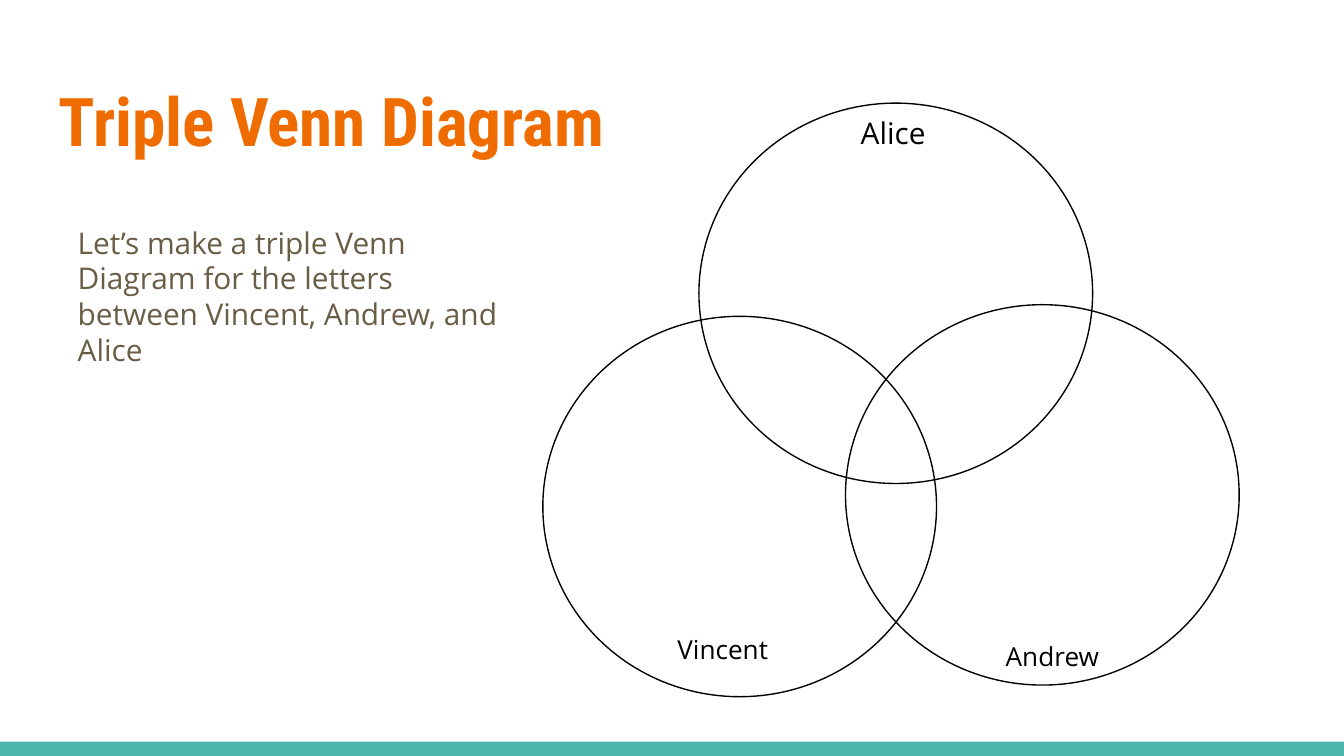
from dataclasses import dataclass

from pptx import Presentation
from pptx.dml.color import RGBColor
from pptx.enum.shapes import MSO_SHAPE
from pptx.enum.text import MSO_ANCHOR, PP_ALIGN
from pptx.util import Cm, Pt


@dataclass(frozen=True)
class Theme:
    title: RGBColor = RGBColor(0xEF, 0x6C, 0x00)
    body: RGBColor = RGBColor(0x69, 0x5D, 0x46)
    ink: RGBColor = RGBColor(0, 0, 0)
    band: RGBColor = RGBColor(0x4D, 0xB6, 0xAC)
    title_font: str = "Roboto Condensed"
    body_font: str = "Open Sans"
    title_size: int = 36
    body_size: int = 16
    label_size: int = 14


THEME = Theme()
WIDTH, HEIGHT = 25.4, 14.29
BAND_HEIGHT = 0.27
CIRCLE_SIZE = (7.44, 7.19)

# Left and top of each circle
CIRCLES = [(13.21, 1.95), (15.98, 5.76), (10.26, 5.98)]

# Name, box (left, top, width, height) and type size
LABELS = [
    ("Alice", (15.29, 1.91, 3.18, 0.91), THEME.body_size),
    ("Vincent", (12.07, 11.73, 3.18, 0.91), THEME.label_size),
    ("Andrew", (18.57, 11.86, 2.64, 0.66), THEME.label_size),
]


def set_attrs(obj, values):
    for name, value in values.items():
        setattr(obj, name, value)


def write_text(sp, text, font, size, color, align=PP_ALIGN.LEFT, bold=False):
    tf = sp.text_frame
    inset = Cm(0.25)
    set_attrs(tf, {
        "word_wrap": True, "vertical_anchor": MSO_ANCHOR.TOP,
        "margin_left": inset, "margin_right": inset,
        "margin_top": inset, "margin_bottom": inset,
    })
    p = tf.paragraphs[0]
    set_attrs(p, {"alignment": align, "line_spacing": 1.0, "space_before": Pt(0)})
    r = p.add_run()
    r.text = text
    set_attrs(r.font, {"name": font, "size": Pt(size), "bold": bold})
    r.font.color.rgb = color


def add_title(s, text):
    sp = s.shapes.title
    set_attrs(sp, {"left": Cm(0.86), "top": Cm(1.24),
                   "width": Cm(23.67), "height": Cm(1.96)})
    write_text(sp, text, THEME.title_font, THEME.title_size, THEME.title, bold=True)


def add_text(s, text, box, size, color, align=PP_ALIGN.LEFT):
    sp = s.shapes.add_textbox(*map(Cm, box))
    write_text(sp, text, THEME.body_font, size, color, align)


def add_circle(s, left, top):
    sp = s.shapes.add_shape(MSO_SHAPE.OVAL, *map(Cm, (left, top, *CIRCLE_SIZE)))
    sp.shadow.inherit = False
    sp.fill.background()
    sp.line.color.rgb = THEME.ink
    sp.line.width = Pt(0.75)


def add_band(s):
    sp = s.shapes.add_shape(MSO_SHAPE.RECTANGLE, 0, Cm(HEIGHT - BAND_HEIGHT),
                            Cm(WIDTH), Cm(BAND_HEIGHT))
    sp.shadow.inherit = False
    sp.fill.solid()
    sp.fill.fore_color.rgb = THEME.band
    sp.line.fill.background()


def main():
    prs = Presentation()
    set_attrs(prs, {"slide_width": Cm(WIDTH), "slide_height": Cm(HEIGHT)})
    s = prs.slides.add_slide(prs.slide_layouts[5])

    # Frame and heading
    add_band(s)
    add_title(s, "Triple Venn Diagram")

    # Venn diagram
    for left, top in CIRCLES:
        add_circle(s, left, top)

    # Task and circle names
    add_text(s, "Let’s make a triple Venn Diagram for the letters between "
             "Vincent, Andrew, and Alice",
             (1.22, 3.99, 8.46, 2.36), THEME.body_size, THEME.body)
    for name, box, size in LABELS:
        add_text(s, name, box, size, THEME.ink, PP_ALIGN.CENTER)

    prs.save("out.pptx")


if __name__ == "__main__":
    main()
